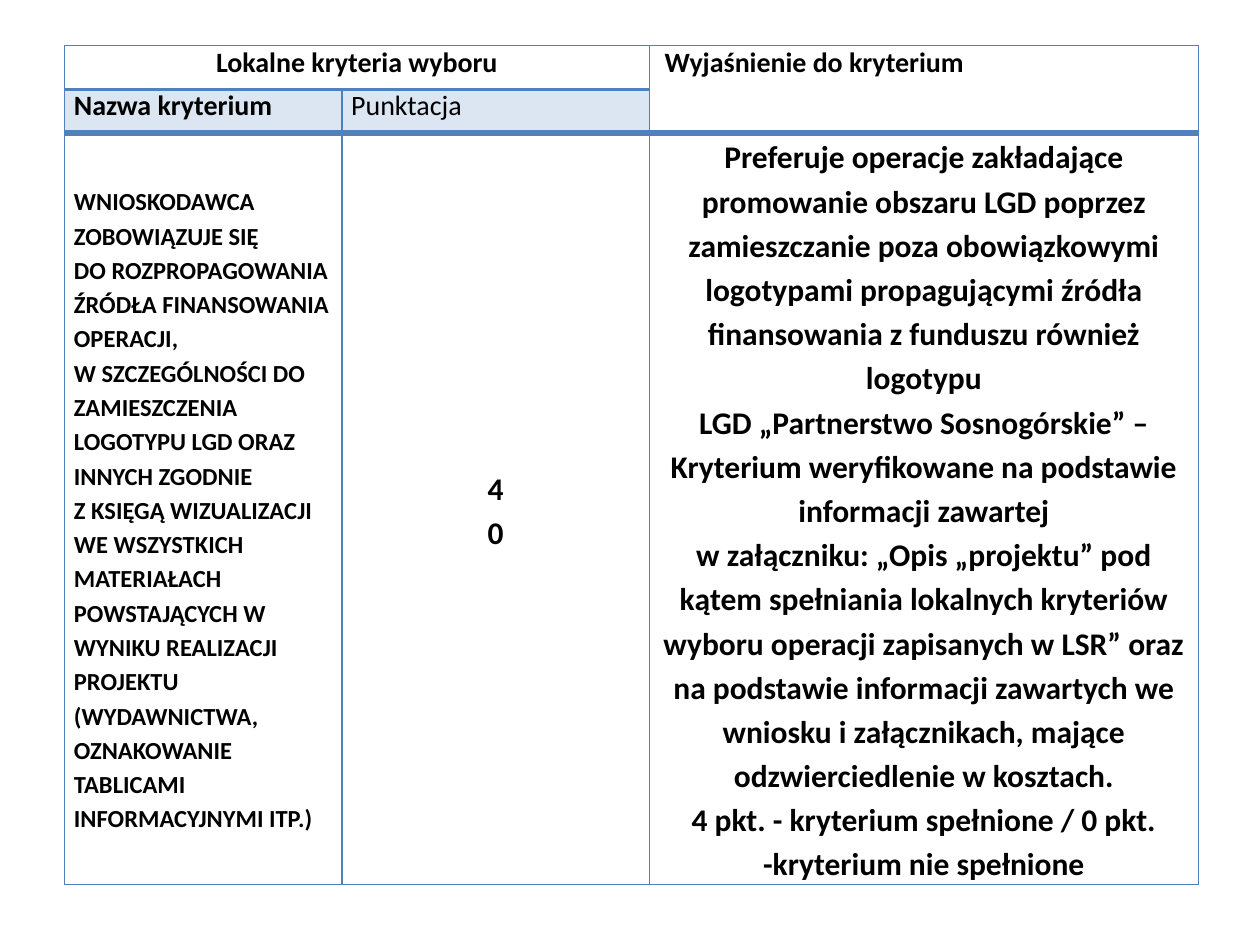
from lxml import etree
from pptx import Presentation
from pptx.dml.color import RGBColor
from pptx.enum.text import MSO_ANCHOR, PP_ALIGN
from pptx.oxml.ns import qn
from pptx.util import Cm, Pt

LEFT, CENTER = PP_ALIGN.LEFT, PP_ALIGN.CENTER
TOP, MIDDLE = MSO_ANCHOR.TOP, MSO_ANCHOR.MIDDLE
BLUE = RGBColor(0x4F, 0x81, 0xBD)
PALE = RGBColor(0xDC, 0xE6, 0xF2)
BLACK = RGBColor(0, 0, 0)
FONT = "Calibri"

COLUMNS = [5.59, 6.2, 11.07]
ROWS = [0.88, 0.88, 15.15]
RULES = [1, 2, 4, 1]

CRITERION = (
    "WNIOSKODAWCA ZOBOWIĄZUJE SIĘ\n"
    "DO ROZPROPAGOWANIA ŹRÓDŁA FINANSOWANIA OPERACJI,\n"
    "W SZCZEGÓLNOŚCI DO ZAMIESZCZENIA LOGOTYPU LGD ORAZ INNYCH ZGODNIE\n"
    "Z KSIĘGĄ WIZUALIZACJI WE WSZYSTKICH MATERIAŁACH POWSTAJĄCYCH W WYNIKU "
    "REALIZACJI PROJEKTU (WYDAWNICTWA, OZNAKOWANIE TABLICAMI INFORMACYJNYMI ITP.)"
)
EXPLANATION = (
    "Preferuje operacje zakładające promowanie obszaru LGD poprzez zamieszczanie "
    "poza obowiązkowymi logotypami propagującymi źródła finansowania z funduszu "
    "również logotypu\n"
    "LGD „Partnerstwo Sosnogórskie” – Kryterium weryfikowane na podstawie "
    "informacji zawartej\n"
    "w załączniku: „Opis „projektu” pod kątem spełniania lokalnych kryteriów wyboru "
    "operacji zapisanych w LSR” oraz na podstawie informacji zawartych we wniosku "
    "i załącznikach, mające odzwierciedlenie w kosztach."
)
SCORING = "4 pkt. - kryterium spełnione / 0 pkt. -kryterium nie spełnione"


def set_borders(cell, top, bottom):
    """Draw the four blue edges of a cell with the given top and bottom widths."""
    tc_pr = cell._tc.get_or_add_tcPr()
    for tag, width in (("a:lnL", 1), ("a:lnR", 1), ("a:lnT", top), ("a:lnB", bottom)):
        ln = etree.SubElement(tc_pr, qn(tag), w=str(Pt(width)))
        fill = etree.SubElement(ln, qn("a:solidFill"))
        etree.SubElement(fill, qn("a:srgbClr"), val=str(BLUE))


def write_cell(cell, paragraphs, size=16, bold=True, align=LEFT, anchor=TOP,
               spacing=1.0, indent=0.19):
    """Fill a cell with paragraphs, turning newlines into line breaks."""
    cell.margin_left, cell.margin_right = Cm(indent), Cm(0.19)
    cell.margin_top = cell.margin_bottom = 0
    cell.vertical_anchor = anchor
    tf = cell.text_frame
    for i, text in enumerate(paragraphs):
        p = tf.add_paragraph() if i else tf.paragraphs[0]
        p.alignment = align
        p.line_spacing = spacing
        for j, line in enumerate(text.split("\n")):
            if j:
                p.add_line_break()
            r = p.add_run()
            r.text = line
            r.font.name = FONT
            r.font.size = Pt(size)
            r.font.bold = bold
            r.font.color.rgb = BLACK


def add_criteria_table(slide, left, top):
    """Place the criteria table with its top left corner at the given point."""
    frame = slide.shapes.add_table(len(ROWS), len(COLUMNS), left, top,
                                   Cm(sum(COLUMNS)), Cm(sum(ROWS)))
    table = frame.table
    table.first_row = table.horz_banding = False
    for column, width in zip(table.columns, COLUMNS):
        column.width = Cm(width)
    for row, height in zip(table.rows, ROWS):
        row.height = Cm(height)

    table.cell(0, 0).merge(table.cell(0, 1))
    table.cell(0, 2).merge(table.cell(1, 2))
    for i in range(len(ROWS)):
        for j in range(len(COLUMNS)):
            cell = table.cell(i, j)
            tall = cell.is_merge_origin and cell.span_height > 1
            set_borders(cell, RULES[i], RULES[i + 2 if tall else i + 1])
            if i == 1 and j < 2:
                cell.fill.solid()
                cell.fill.fore_color.rgb = PALE
            else:
                cell.fill.background()

    write_cell(table.cell(0, 0), ["Lokalne kryteria wyboru"], align=CENTER)
    write_cell(table.cell(0, 2), ["Wyjaśnienie do kryterium"], indent=0.31)
    write_cell(table.cell(1, 0), ["Nazwa kryterium"])
    write_cell(table.cell(1, 1), ["Punktacja"], bold=False)
    body = {"anchor": MIDDLE, "spacing": 1.15}
    write_cell(table.cell(2, 0), [CRITERION], size=14, **body)
    write_cell(table.cell(2, 1), ["4", "0"], size=18, align=CENTER, **body)
    write_cell(table.cell(2, 2), [EXPLANATION, SCORING], size=18, align=CENTER, **body)


def main():
    """Build the presentation and save it."""
    prs = Presentation()
    prs.slide_width, prs.slide_height = Cm(25.4), Cm(19.05)
    s = prs.slides.add_slide(prs.slide_layouts[6])
    add_criteria_table(s, Cm(1.3), Cm(0.92))
    prs.save("out.pptx")


if __name__ == "__main__":
    main()
